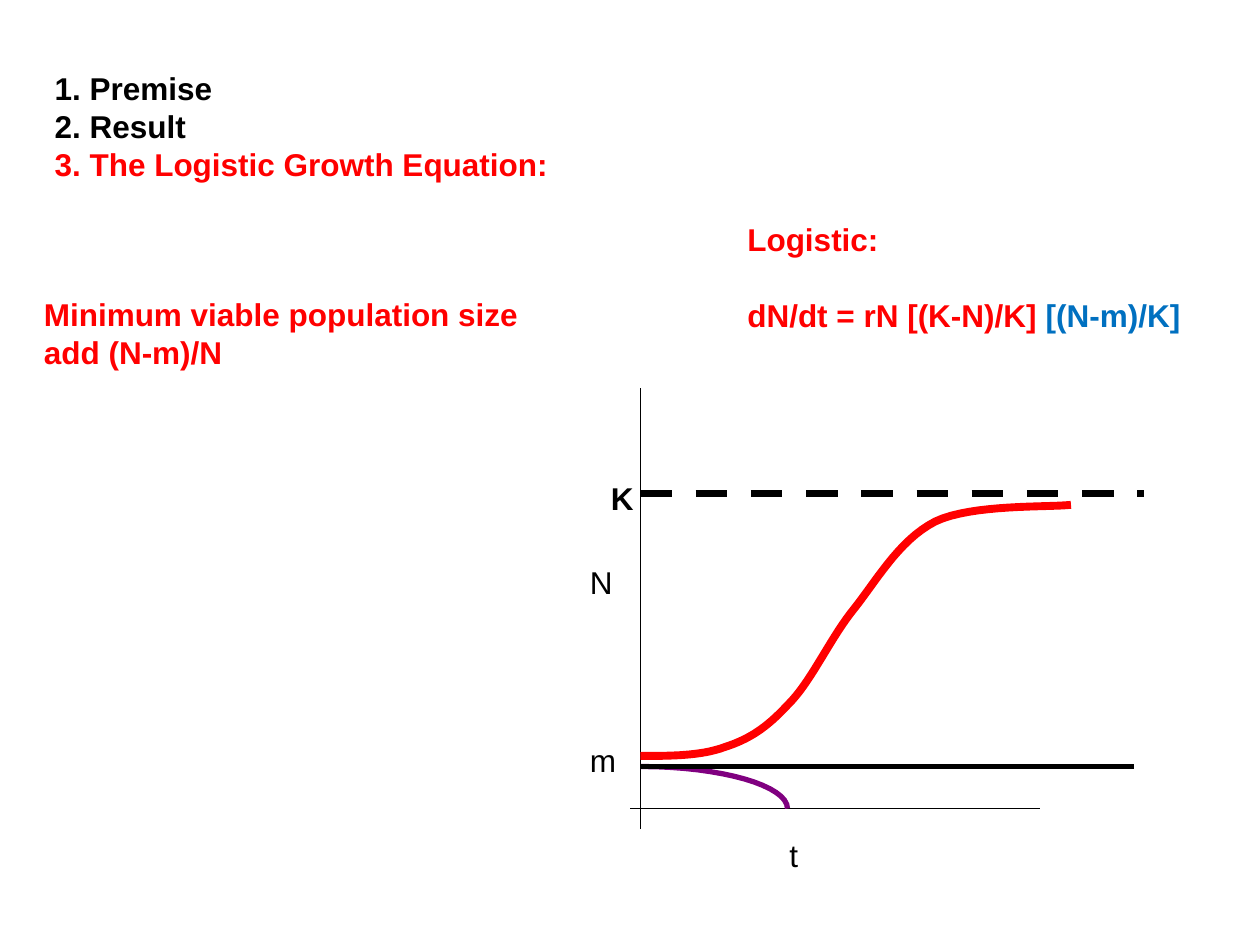
from pptx import Presentation
from pptx.dml.color import RGBColor
from pptx.enum.dml import MSO_LINE
from pptx.enum.shapes import MSO_CONNECTOR
from pptx.enum.text import MSO_ANCHOR, MSO_AUTO_SIZE
from pptx.oxml.ns import qn
from pptx.util import Pt
from lxml.etree import SubElement

BLACK, RED, BLUE, PURPLE = "000000", "FF0000", "0070C0", "800080"
PLAIN = {"name": "Arial", "size": Pt(18), "bold": False}
BOLD = {**PLAIN, "bold": True}
ROW = 21.6  # height of one line of text


def hue(code):
    return RGBColor.from_string(code)


def style(font, form, code):
    for key, val in form.items():
        setattr(font, key, val)
    font.color.rgb = hue(code)


def write(para, text, form, code):
    run = para.add_run()
    run.text = text
    style(run.font, form, code)


def add_box(slide, left, top, wide, high):
    shape = slide.shapes.add_textbox(Pt(left), Pt(top), Pt(wide), Pt(high))
    shape.text_frame.word_wrap = True
    return shape.text_frame


def add_note(slide, box, text, form, code):
    write(add_box(slide, *box).paragraphs[0], text, form, code)


def add_list(slide, box, items):
    # Numbered outline in the body placeholder
    body = slide.placeholders[1]
    for key, val in zip(("left", "top", "width", "height"), box):
        setattr(body, key, Pt(val))
    frame = body.text_frame
    frame.auto_size = MSO_AUTO_SIZE.NONE
    frame.vertical_anchor = MSO_ANCHOR.TOP
    for num, (text, code) in enumerate(items):
        para = frame.add_paragraph() if num else frame.paragraphs[0]
        para.space_before = Pt(0)
        props = para._p.get_or_add_pPr()
        props.set("marL", str(Pt(20)))
        props.set("indent", str(-Pt(20)))
        SubElement(props, qn("a:buFont"), typeface="Arial")
        SubElement(props, qn("a:buAutoNum"), type="arabicPeriod")
        write(para, text, BOLD, code)


def add_model(slide, box):
    # Heading and equation, one line apart
    frame = add_box(slide, *box)
    write(frame.paragraphs[0], "Logistic:", BOLD, RED)
    para = frame.add_paragraph()
    para.space_before = Pt(ROW)
    write(para, "dN/dt = rN [(K-N)/K] ", BOLD, RED)
    write(para, "[(N-m)/K]", BOLD, BLUE)


def add_line(slide, start, end, width, dash=None):
    line = slide.shapes.add_connector(
        MSO_CONNECTOR.STRAIGHT, *(Pt(val) for val in (*start, *end)))
    line.line.color.rgb = hue(BLACK)
    line.line.width = Pt(width)
    if dash:
        line.line.dash_style = dash
    SubElement(line._element.spPr, qn("a:effectLst"))


def trace(knots, steps=16):
    """Points along a chain of cubic Bezier curves."""
    spots = [knots[0]]
    for pos in range(0, len(knots) - 1, 3):
        part = knots[pos:pos + 4]
        for step in range(1, steps + 1):
            t = step / steps
            mix = ((1 - t) ** 3, 3 * t * (1 - t) ** 2, 3 * t * t * (1 - t), t ** 3)
            spots.append(tuple(sum(m * k[axis] for m, k in zip(mix, part))
                               for axis in (0, 1)))
    return spots


def add_curve(slide, left, top, knots, code, width):
    spots = [(Pt(left + x), Pt(top + y)) for x, y in trace(knots)]
    pen = slide.shapes.build_freeform(*spots[0])
    pen.add_line_segments(spots[1:], close=False)
    shape = pen.convert_to_shape()
    shape.shadow.inherit = False
    shape.fill.background()
    shape.line.color.rgb = hue(code)
    shape.line.width = Pt(width)


def add_plot(slide, box):
    left, top, wide, high = box
    zero, floor = left + 36, top + 240
    cap, low = top + 60, top + 216

    # Axes
    add_line(slide, (zero, top), (zero, floor + 12), 0.75)
    add_line(slide, (zero - 6, floor), (zero + 228, floor), 0.75)

    # Growth above m, with K as the limit
    growth = [(0, 210), (17.25, 210), (34.5, 210), (48, 205), (62, 200.5),
              (72, 194), (84, 181), (96.5, 169), (106.5, 146.5), (120, 128.5),
              (134, 111.5), (147, 87), (168.5, 76), (189.5, 66), (233, 68),
              (246, 66.5)]
    add_curve(slide, zero, top, growth, RED, 4.5)
    add_line(slide, (zero, cap), (left + wide, cap), 4.5, MSO_LINE.DASH)

    # Decline below m
    fall = [(0, 216), (46.5, 216), (84, 227), (84, 240)]
    add_curve(slide, zero, top, fall, PURPLE, 3)
    add_line(slide, (zero, low), (left + wide - 6, low), 3)

    # Labels
    for text, x, y, form in (("N", 0, 96, PLAIN), ("t", 114, 252, PLAIN),
                             ("K", 12, 48, BOLD), ("m", 0, 198, PLAIN)):
        add_note(slide, (left + x, top + y, 36, 28.8), text, form, BLACK)


def main():
    deck = Presentation()
    deck.slide_width, deck.slide_height = Pt(720), Pt(540)
    slide = deck.slides.add_slide(deck.slide_layouts[1])
    title = slide.shapes.title._element
    title.getparent().remove(title)

    add_list(slide, (24, 36, 678, 3 * ROW + 7.2),
             [("Premise", BLACK), ("Result", BLACK),
              ("The Logistic Growth Equation:", RED)])
    add_model(slide, (420, 36 + 4 * ROW, 282, 3 * ROW + 7.2))
    add_note(slide, (18, 165, 306, 51),
             "Minimum viable population size add (N-m)/N", BOLD, RED)
    add_plot(slide, (330, 222, 324, 282))
    deck.save("out.pptx")


if __name__ == "__main__":
    main()
